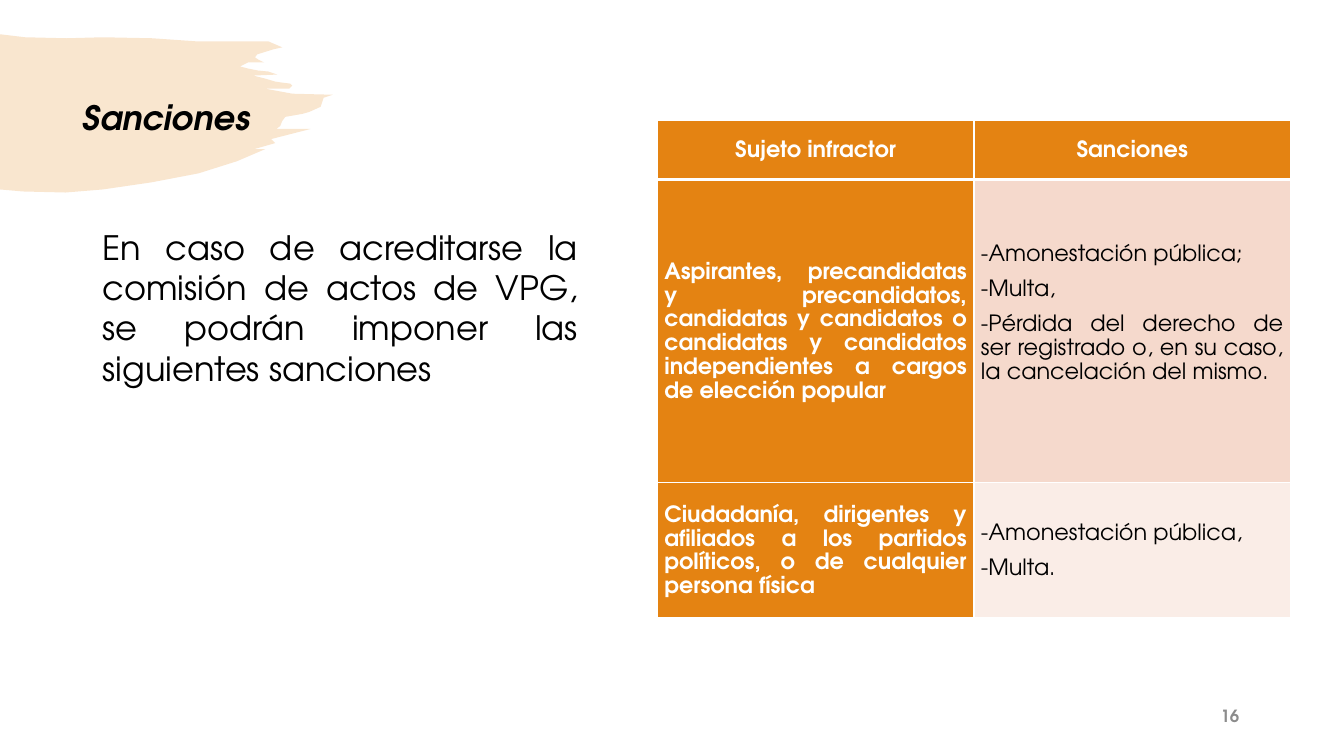
from lxml.etree import SubElement
from pptx import Presentation
from pptx.dml.color import RGBColor
from pptx.enum.text import MSO_ANCHOR, PP_ALIGN
from pptx.oxml.ns import qn
from pptx.util import Inches, Pt

FONT = "TeX Gyre Adventor"
ORANGE, WHITE, BLACK, GREY = "E48312", "FFFFFF", "000000", "8C8C8C"
PINK, PALE_PINK = "F5D9CC", "FAEDE7"

BRUSH_OUTLINE = [
    (0, 0), (0.25, 0.03), (0.66, 0.04), (1.02, 0.03), (1.51, 0.04),
    (1.94, 0.07), (2.48, 0.07), (2.66, 0.07), (2.8, 0.13), (2.71, 0.15),
    (2.55, 0.2), (2.53, 0.23), (2.56, 0.25), (2.62, 0.28), (2.46, 0.28),
    (2.38, 0.32), (2.46, 0.34), (2.56, 0.36), (2.66, 0.37), (2.75, 0.4),
    (2.51, 0.41), (2.63, 0.44), (2.73, 0.47), (2.8, 0.48), (2.88, 0.49),
    (2.9, 0.51), (2.87, 0.54), (2.63, 0.54), (2.9, 0.59), (3.3, 0.6),
    (3.21, 0.63), (3.18, 0.72), (3.07, 0.77), (3, 0.79), (2.83, 0.82),
    (2.8, 0.86), (2.78, 0.91), (2.74, 0.94), (3.08, 0.94), (2.69, 1.04),
    (2.73, 1.08), (2.52, 1.14), (2.63, 1.14), (2.35, 1.26), (1.97, 1.38),
    (1.5, 1.47), (1.02, 1.54), (0.65, 1.57), (0.23, 1.56), (0, 1.54),
]

SANCTIONS = [
    ("Aspirantes, precandidatas y precandidatos, candidatas y candidatos o "
     "candidatas y candidatos independientes a cargos de elección popular",
     ["-Amonestación pública;", "-Multa,",
      "-Pérdida del derecho de ser registrado o, en su caso, la cancelación del mismo."],
     PINK, 0.36),
    ("Ciudadanía, dirigentes y afiliados a los partidos políticos, o de "
     "cualquier persona física",
     ["-Amonestación pública,", "-Multa."], PALE_PINK, 0),
]


def rgb(value):
    return RGBColor.from_string(value)


def write(frame, lines, size, color, align, bold=False, italic=False,
          spacing=None, before=0, after=0):
    for index, line in enumerate(lines):
        paragraph = frame.paragraphs[0] if index == 0 else frame.add_paragraph()
        paragraph.alignment = align
        paragraph.line_spacing = spacing
        paragraph.space_before, paragraph.space_after = Pt(before), Pt(after)
        run = paragraph.add_run()
        run.text = line
        font = run.font
        font.name, font.size, font.bold, font.italic = FONT, Pt(size), bold, italic
        font.color.rgb = rgb(color)


def add_text(slide, box, text, size, color, align, anchor, **style):
    frame = slide.shapes.add_textbox(*map(Inches, box)).text_frame
    frame.word_wrap = True
    frame.vertical_anchor = anchor
    write(frame, [text], size, color, align, **style)


def add_heading(slide, left, top):
    points = [(Inches(left + x), Inches(top + y)) for x, y in BRUSH_OUTLINE]
    builder = slide.shapes.build_freeform(*points[0])
    builder.add_line_segments(points[1:], close=True)
    brush = builder.convert_to_shape()
    brush.shadow.inherit = False
    brush.line.fill.background()
    brush.fill.solid()
    brush.fill.fore_color.rgb = rgb(ORANGE)
    tint = brush.fill._xPr.find(qn("a:solidFill"))[0]
    SubElement(tint, qn("a:alpha"), val="20000")
    add_text(slide, (left + 0.72, top + 0.12, 2.01, 1.45), "Sanciones", 24, BLACK,
             PP_ALIGN.LEFT, MSO_ANCHOR.MIDDLE, bold=True, italic=True, spacing=0.9)


def set_borders(cell, bottom):
    properties = cell._tc.get_or_add_tcPr()
    for index, (side, width) in enumerate(
            [("lnL", 1), ("lnR", 1), ("lnT", 1), ("lnB", bottom)]):
        line = properties.makeelement(qn("a:" + side), {"w": str(Pt(width))})
        SubElement(SubElement(line, qn("a:solidFill")), qn("a:srgbClr"), val=WHITE)
        properties.insert(index, line)


def fill_cell(cell, lines, fill, color, align, bold, bottom_border=1, bottom_margin=0):
    cell.fill.solid()
    cell.fill.fore_color.rgb = rgb(fill)
    cell.vertical_anchor = MSO_ANCHOR.MIDDLE
    cell.margin_left = cell.margin_right = Inches(0.07)
    cell.margin_top, cell.margin_bottom = 0, Inches(bottom_margin)
    write(cell.text_frame, lines, 16, color, align, bold=bold, spacing=1.15, after=8)
    set_borders(cell, bottom_border)


def add_sanctions_table(slide, left, top, width, heights):
    box = map(Inches, (left, top, width, sum(heights)))
    table = slide.shapes.add_table(len(heights), 2, *box).table
    for row, height in zip(table.rows, heights):
        row.height = Inches(height)
    for column, title in enumerate(["Sujeto infractor", "Sanciones"]):
        fill_cell(table.cell(0, column), [title], ORANGE, WHITE, PP_ALIGN.CENTER,
                  True, bottom_border=3)
    for row, (offender, penalties, tint, margin) in enumerate(SANCTIONS, 1):
        fill_cell(table.cell(row, 0), [offender], ORANGE, WHITE, PP_ALIGN.JUSTIFY, True)
        fill_cell(table.cell(row, 1), penalties, tint, BLACK, PP_ALIGN.JUSTIFY, False,
                  bottom_margin=margin)


def main():
    deck = Presentation()
    deck.slide_width, deck.slide_height = Inches(13.33), Inches(7.5)
    slide = deck.slides.add_slide(deck.slide_layouts[6])
    add_heading(slide, 0, 0.34)
    add_text(slide, (0.92, 2.2, 4.91, 4.55),
             "En caso de acreditarse la comisión de actos de VPG, se podrán imponer "
             "las siguientes sanciones", 24, BLACK, PP_ALIGN.JUSTIFY, MSO_ANCHOR.TOP,
             before=10)
    add_sanctions_table(slide, 6.52, 1.19, 6.28, [0.59, 3.01, 1.34])
    add_text(slide, (9.39, 6.9, 3, 0.4), "16", 12, GREY, PP_ALIGN.RIGHT,
             MSO_ANCHOR.MIDDLE, bold=True)
    deck.save("out.pptx")


if __name__ == "__main__":
    main()
